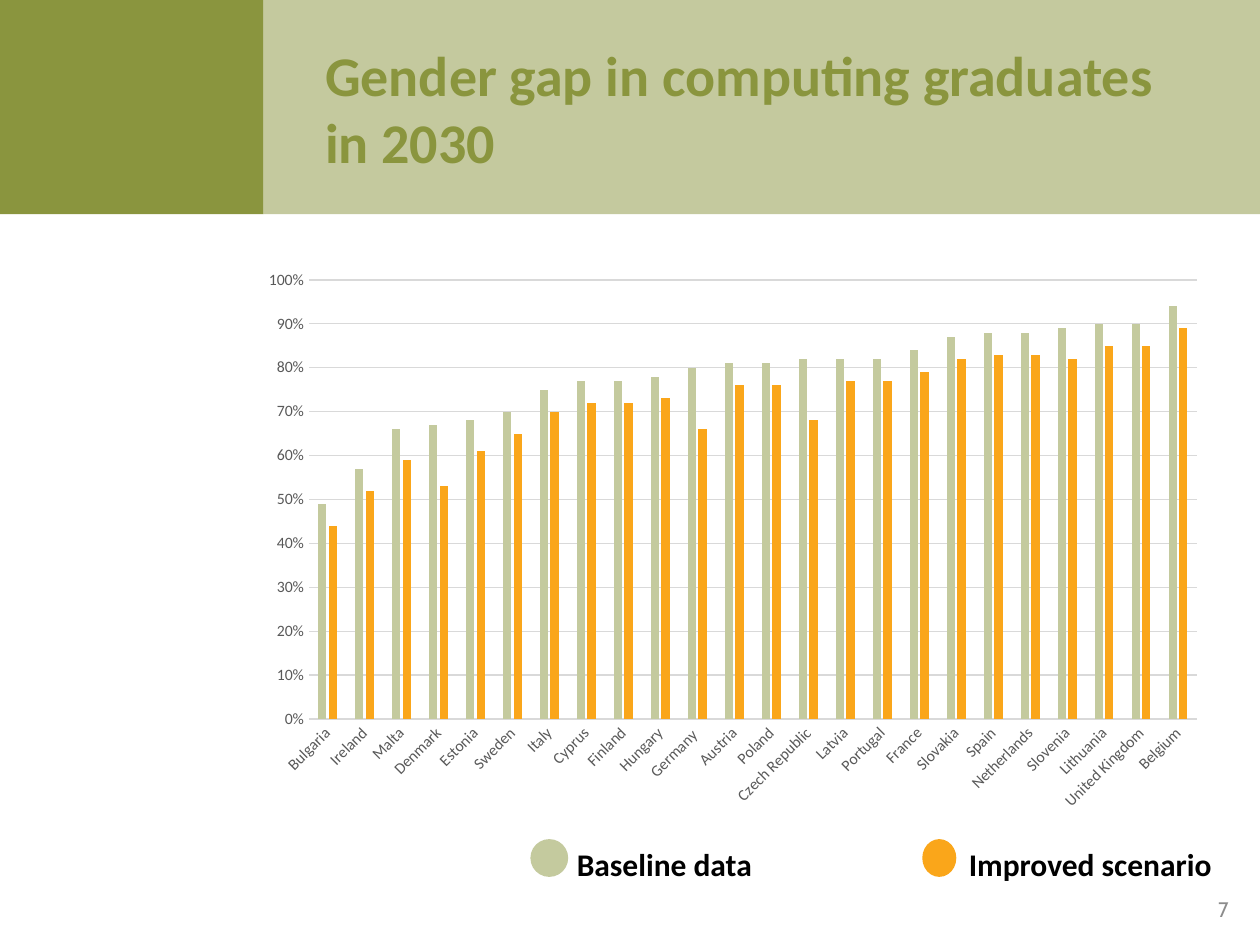
"""Build the slide on the gender gap in computing graduates in 2030."""
import pptx
import pptx.chart.data
import pptx.dml.color
import pptx.enum.chart
import pptx.enum.shapes
import pptx.enum.text
import pptx.oxml.ns
import pptx.util
from lxml import etree

Inches, Pt = pptx.util.Inches, pptx.util.Pt
RGBColor = pptx.dml.color.RGBColor
Align, Anchor = pptx.enum.text.PP_ALIGN, pptx.enum.text.MSO_ANCHOR
Shape = pptx.enum.shapes.MSO_SHAPE

OLIVE = RGBColor(0x8A, 0x95, 0x3E)
SAGE = RGBColor(0xC4, 0xCA, 0x9E)
ORANGE = RGBColor(0xFA, 0xA6, 0x1A)
BLACK = RGBColor(0, 0, 0)
LABEL_GREY = RGBColor(0x59, 0x59, 0x59)
RULE_GREY = RGBColor(0xD9, 0xD9, 0xD9)
NUMBER_GREY = RGBColor(0x8C, 0x8C, 0x8C)

TITLE = "Gender gap in computing graduates in 2030"
PAGE_NUMBER = "7"
GAPS = [
    ("Bulgaria", 0.49, 0.44), ("Ireland", 0.57, 0.52), ("Malta", 0.66, 0.59),
    ("Denmark", 0.67, 0.53), ("Estonia", 0.68, 0.61), ("Sweden", 0.7, 0.65),
    ("Italy", 0.75, 0.7), ("Cyprus", 0.77, 0.72), ("Finland", 0.77, 0.72),
    ("Hungary", 0.78, 0.73), ("Germany ", 0.8, 0.66), ("Austria", 0.81, 0.76),
    ("Poland", 0.81, 0.76), ("Czech Republic", 0.82, 0.68), ("Latvia", 0.82, 0.77),
    ("Portugal", 0.82, 0.77), ("France", 0.84, 0.79), ("Slovakia", 0.87, 0.82),
    ("Spain", 0.88, 0.83), ("Netherlands", 0.88, 0.83), ("Slovenia", 0.89, 0.82),
    ("Lithuania", 0.9, 0.85), ("United Kingdom", 0.9, 0.85), ("Belgium", 0.94, 0.89),
]
SERIES = [("Series 1", SAGE), ("Series 2", ORANGE)]
LEGEND = [
    ("Baseline data", SAGE, 4.21, 0.3, 4.48, 2.1),
    ("Improved scenario", ORANGE, 7.32, 0.27, 7.59, 2.21),
]
LEGEND_TOP = 6.66
BAND_HEIGHT = 1.7
SIDE_WIDTH = 2.09


def write_text(frame, text, size=18, color=BLACK, font="Calibri", bold=False,
               align=Align.LEFT, anchor=Anchor.TOP):
    frame.word_wrap = True
    frame.auto_size = pptx.enum.text.MSO_AUTO_SIZE.NONE
    frame.vertical_anchor = anchor
    paragraph = frame.paragraphs[0]
    paragraph.alignment = align
    run = paragraph.add_run()
    run.text = text
    style_font(run.font, size, color, font)
    run.font.bold = bold


def style_font(font, size, color, name="Calibri"):
    font.name, font.size = name, Pt(size)
    font.color.rgb = color


def add_filled(slide, kind, left, top, width, height, color, opacity=100):
    filled = slide.shapes.add_shape(kind, *map(Inches, (left, top, width, height)))
    filled.shadow.inherit = False
    filled.fill.solid()
    filled.fill.fore_color.rgb = color
    filled.line.fill.background()
    if opacity < 100:
        rgb = filled.fill._xPr.find(".//" + pptx.oxml.ns.qn("a:srgbClr"))
        etree.SubElement(rgb, pptx.oxml.ns.qn("a:alpha"), val=str(opacity * 1000))


def add_text(slide, text, left, top, width, height, **style):
    box = slide.shapes.add_textbox(*map(Inches, (left, top, width, height)))
    write_text(box.text_frame, text, **style)


def add_gap_chart(slide):
    countries, *columns = zip(*GAPS)
    data = pptx.chart.data.CategoryChartData(number_format="0%")
    data.categories = countries
    for (name, _), values in zip(SERIES, columns):
        data.add_series(name, values)
    chart = slide.shapes.add_chart(
        pptx.enum.chart.XL_CHART_TYPE.COLUMN_CLUSTERED,
        *map(Inches, (1.98, 2.06, 7.67, 4.46)), data).chart
    chart.has_legend = chart.has_title = False
    style_font(chart.font, 10, BLACK)

    plot = chart.plots[0]
    plot.gap_width, plot.overlap, plot.vary_by_categories = 219, -27, False
    for series, (_, color) in zip(plot.series, SERIES):
        series.format.fill.solid()
        series.format.fill.fore_color.rgb = color
        series.invert_if_negative = False

    country_axis, share_axis = chart.category_axis, chart.value_axis
    for axis in (country_axis, share_axis):
        axis.major_tick_mark = axis.minor_tick_mark = pptx.enum.chart.XL_TICK_MARK.NONE
        style_font(axis.tick_labels.font, 9, LABEL_GREY)
    country_axis._element.txPr.bodyPr.set("rot", "-2700000")
    share_axis.minimum_scale, share_axis.maximum_scale, share_axis.major_unit = 0, 1, 0.1
    share_axis.tick_labels.number_format = "0%"
    share_axis.tick_labels.number_format_is_linked = False
    share_axis.format.line.fill.background()
    for rule in (country_axis.format.line, share_axis.major_gridlines.format.line):
        rule.color.rgb = RULE_GREY
        rule.width = Pt(0.75)


def main():
    deck = pptx.Presentation()
    deck.slide_width, deck.slide_height = Inches(10), Inches(7.5)
    slide = deck.slides.add_slide(deck.slide_layouts[5])

    add_filled(slide, Shape.RECTANGLE, 0, 0, SIDE_WIDTH, BAND_HEIGHT, OLIVE)
    add_filled(slide, Shape.RECTANGLE, SIDE_WIDTH, 0, 10 - SIDE_WIDTH, BAND_HEIGHT,
               OLIVE, opacity=50)
    title = slide.shapes.title
    title.left, title.top, title.width, title.height = map(Inches, (2.48, 0, 7.06, 1.71))
    write_text(title.text_frame, TITLE, size=32, color=OLIVE, bold=True,
               anchor=Anchor.MIDDLE)
    slide.shapes._spTree.append(title._element)

    add_gap_chart(slide)
    for label, color, dot_left, dot_width, label_left, label_width in LEGEND:
        add_text(slide, label, label_left, LEGEND_TOP, label_width, 0.37, bold=True)
        add_filled(slide, Shape.OVAL, dot_left, LEGEND_TOP, dot_width, 0.3, color)
    add_text(slide, PAGE_NUMBER, 9.41, 7.06, 0.44, 0.31, size=12, color=NUMBER_GREY,
             font="Cabin", align=Align.RIGHT, anchor=Anchor.MIDDLE)
    deck.save("out.pptx")


if __name__ == "__main__":
    main()
